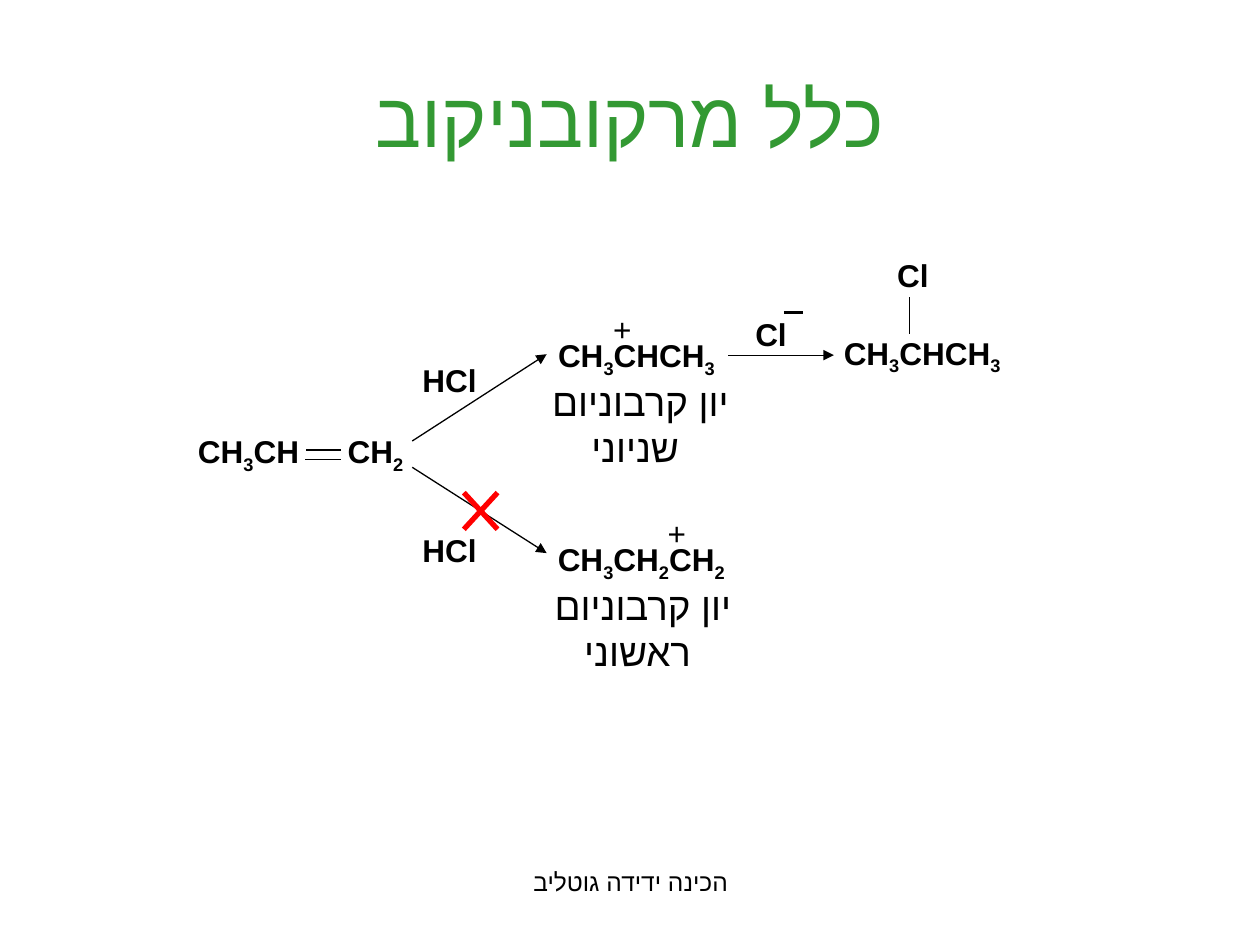
from itertools import groupby

from lxml import etree
from pptx import Presentation
from pptx.enum import shapes, text
from pptx.dml.color import RGBColor
from pptx.oxml.ns import qn
from pptx.util import Cm, Pt

COLORS = {"title": "339933", "ink": "000000", "cross": "FF0000"}
FONT = "Arial"
RIGHT, CENTER = text.PP_ALIGN.RIGHT, text.PP_ALIGN.CENTER

TITLE = "כלל מרקובניקוב"
TITLE_AREA = (1.27, 0.76, 22.86, 3.18)

# Lengths in centimetres: text, left, top, width
FORMULA_HEIGHT = 1.02
FORMULAS = [
    ("CH3CH", 3.61, 8.59, 2.67),
    ("CH2", 6.58, 8.59, 1.8),
    ("CH3CHCH3", 10.9, 6.65, 3.76),
    ("CH3CH2CH2", 10.85, 10.77, 4.01),
    ("CH3CHCH3", 16.66, 6.6, 3.76),
    ("Cl", 14.66, 6.22, 1.45),
    ("Cl", 17.65, 5.03, 1.32),
    ("HCl", 8.26, 7.16, 1.6),
    ("HCl", 8.26, 10.59, 1.6),
]
CHARGES = [("+", 12.01, 6.12, 0.97), ("+", 13.11, 10.24, 0.97)]

# Text, size, left, top, width, height
CAPTIONS = [
    ("יון קרבוניום \nשניוני", 22, 9.86, 7.49, 5.89, 2.11),
    ("יון קרבוניום \nראשוני", 22, 9.91, 11.61, 5.89, 2.11),
    ("הכינה ידידה גוטליב", 14, 8.69, 17.35, 8.05, 1.32),
]

# Start x, start y, end x, end y
BONDS = [(6.17, 9.07, 6.88, 9.07), (6.15, 9.27, 6.88, 9.27), (18.34, 5.99, 18.34, 6.73)]
ARROWS = [(8.31, 8.89, 11.02, 7.14), (8.31, 9.42, 11.02, 11.15), (14.68, 7.16, 16.81, 7.16)]
MINUS = [(15.8, 6.3, 16.18, 6.3)]
CROSS = [(10.03, 9.93, 9.35, 10.67), (9.35, 9.93, 10.03, 10.67)]


def add_span(para, words, size, color="ink", bold=False):
    span = para.add_run()
    span.text = words
    formats = {"name": FONT, "size": Pt(size), "bold": bold}
    for name, value in formats.items():
        setattr(span.font, name, value)
    span.font.color.rgb = RGBColor.from_string(COLORS[color])
    etree.SubElement(span.font._element, qn("a:cs"), typeface=FONT)
    return span


def set_direction(para, align):
    """Align a paragraph that reads from right to left."""
    para.alignment = align
    para._p.get_or_add_pPr().set("rtl", "1")


def add_box(slide, area, align):
    box = slide.shapes.add_textbox(*map(Cm, area))
    box.text_frame.word_wrap = True
    para = box.text_frame.paragraphs[0]
    set_direction(para, align)
    return box, para


def add_formula(slide, formula, left, top, width, bold=True):
    """Write a formula with its digits as subscripts."""
    box, para = add_box(slide, (left, top, width, FORMULA_HEIGHT), RIGHT)
    box.text_frame.margin_left = 0
    for is_digit, letters in groupby(formula, str.isdigit):
        span = add_span(para, "".join(letters), 18, bold=bold)
        if is_digit:
            span.font._element.set("baseline", "-25000")


def add_caption(slide, words, size, *area):
    box, para = add_box(slide, area, CENTER)
    for index, row in enumerate(words.split("\n")):
        if index:
            para.add_line_break()
        add_span(para, row, size)


def add_line(slide, ends, color="ink", width=0.75, arrow=False):
    line = slide.shapes.add_connector(shapes.MSO_CONNECTOR.STRAIGHT, *map(Cm, ends))
    line.line.color.rgb = RGBColor.from_string(COLORS[color])
    line.line.width = Pt(width)
    if arrow:
        etree.SubElement(line.line._get_or_add_ln(), qn("a:tailEnd"), type="triangle")
    etree.SubElement(line._element.spPr, qn("a:effectLst"))


def main():
    deck = Presentation()
    deck.slide_width, deck.slide_height = Cm(25.4), Cm(19.05)
    page = deck.slides.add_slide(deck.slide_layouts[5])

    title = page.shapes.title
    for name, value in zip(("left", "top", "width", "height"), TITLE_AREA):
        setattr(title, name, Cm(value))
    title.text_frame.vertical_anchor = text.MSO_ANCHOR.MIDDLE
    para = title.text_frame.paragraphs[0]
    set_direction(para, CENTER)
    add_span(para, TITLE, 44, "title")

    for formula in FORMULAS:
        add_formula(page, *formula)
    for charge in CHARGES:
        add_formula(page, *charge, bold=False)
    for caption in CAPTIONS:
        add_caption(page, *caption)

    line_styles = [
        (BONDS, {}),
        (ARROWS, {"arrow": True}),
        (MINUS, {"width": 1.5}),
        (CROSS, {"color": "cross", "width": 3}),
    ]
    for lines, style in line_styles:
        for ends in lines:
            add_line(page, ends, **style)

    deck.save("out.pptx")


if __name__ == "__main__":
    main()
